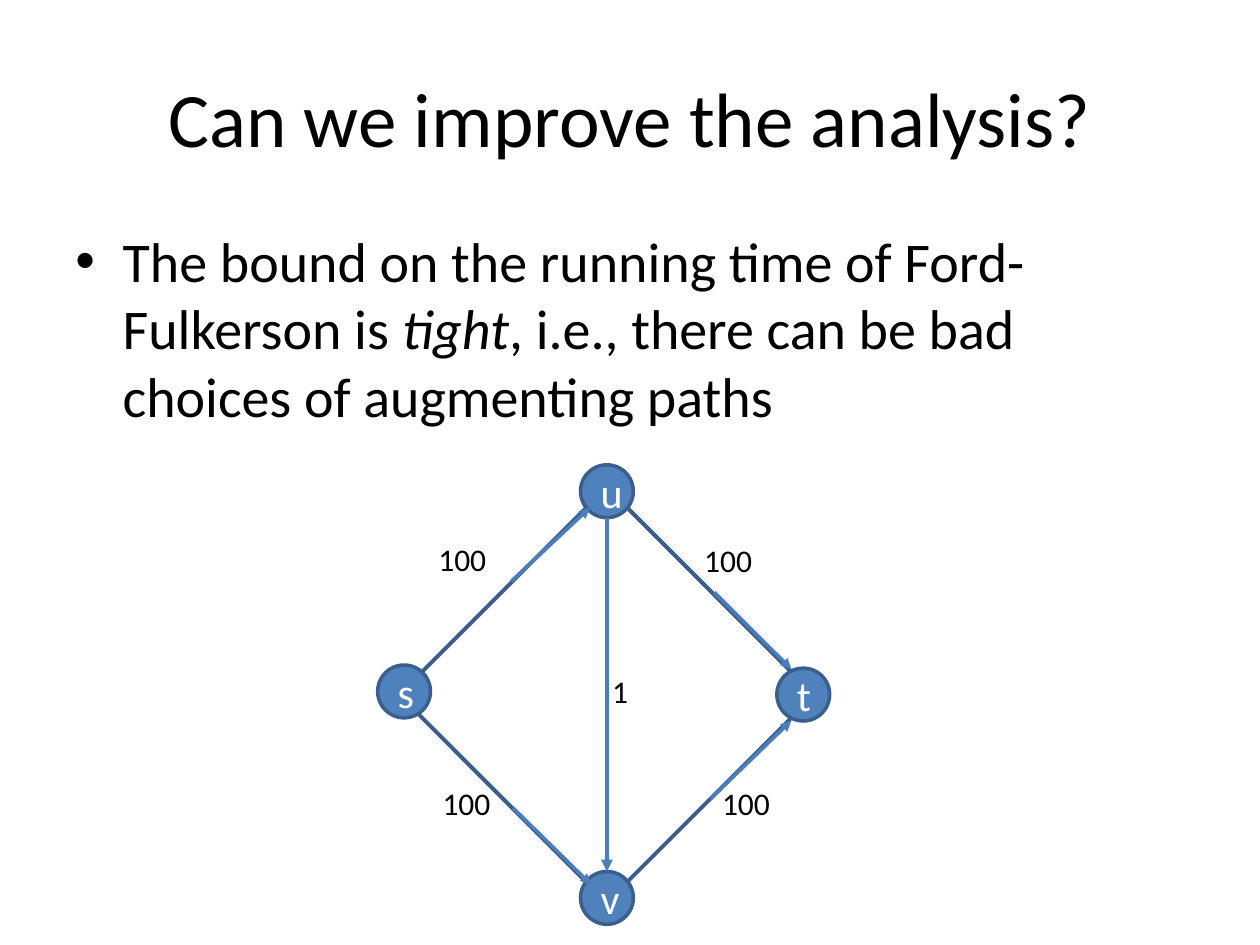
from lxml import etree
from pptx import Presentation, util as u
from pptx.dml.color import RGBColor
from pptx.enum import shapes, text
from pptx.oxml import ns

Pt = u.Pt


def color(value):
    return RGBColor.from_string(value)


def add_xml(parent, tag, **attributes):
    return etree.SubElement(parent, ns.qn(tag), attributes)


def write(paragraph, content, size, ink="000000", italic=False, align=None):
    """Add a formatted run; align applies to its whole paragraph."""
    if align is not None:
        paragraph.alignment = align
    run = paragraph.add_run()
    run.text = content
    run.font.name = "Calibri"
    run.font.size = Pt(size)
    run.font.italic = italic
    run.font.color.rgb = color(ink)


class Deck:
    node_fill, outline, arrow_color = "4F81BD", "3A5F8C", "4B7EBC"
    node_size = 30.2

    def __init__(self, slide):
        self.slide = slide

    def box(self, left, top, width, height, wrap=True, anchor=text.MSO_ANCHOR.TOP):
        frame = self.slide.shapes.add_textbox(
            Pt(left), Pt(top), Pt(width), Pt(height)).text_frame
        frame.word_wrap = wrap
        frame.vertical_anchor = anchor
        return frame

    def title(self, content):
        frame = self.box(36, 21.6, 648, 90, anchor=text.MSO_ANCHOR.MIDDLE)
        write(frame.paragraphs[0], content, 44, align=text.PP_ALIGN.CENTER)

    def bullet(self, runs):
        paragraph = self.box(36, 126, 648, 131.8).paragraphs[0]
        properties = paragraph._p.get_or_add_pPr()
        properties.set("marL", str(Pt(27)))
        properties.set("indent", str(Pt(-27)))
        add_xml(properties, "a:buFont", typeface="Arial")
        add_xml(properties, "a:buChar", char="•")
        for content, italic in runs:
            write(paragraph, content, 32, italic=italic)

    def outlined(self, preset, left, top, size, weight):
        shape = self.slide.shapes.add_shape(preset, Pt(left), Pt(top), Pt(size), Pt(size))
        shape.shadow.inherit = False
        shape.line.color.rgb = color(self.outline)
        shape.line.width = Pt(weight)
        return shape

    def diamond(self, left, top, size):
        """Draw the four edges of the network as a square on its corner."""
        square = self.outlined(shapes.MSO_SHAPE.RECTANGLE, left, top, size, 2.25)
        square.fill.background()
        square.rotation = 45

    def node(self, name, left, top):
        circle = self.outlined(shapes.MSO_SHAPE.OVAL, left, top, self.node_size, 2)
        circle.fill.solid()
        circle.fill.fore_color.rgb = color(self.node_fill)
        circle.text_frame.vertical_anchor = text.MSO_ANCHOR.MIDDLE
        write(circle.text_frame.paragraphs[0], name, 24, ink="FFFFFF",
              align=text.PP_ALIGN.CENTER)
        return circle

    def arrow(self, x1, y1, x2, y2, weight=2):
        line = self.slide.shapes.add_connector(
            shapes.MSO_CONNECTOR.STRAIGHT, Pt(x1), Pt(y1), Pt(x2), Pt(y2))
        line.line.color.rgb = color(self.arrow_color)
        line.line.width = Pt(weight)
        add_xml(line.line._get_or_add_ln(), "a:tailEnd", type="triangle")
        add_xml(line._element.spPr, "a:effectLst")
        return line

    def capacity(self, value, left, top, width=42.5):
        frame = self.box(left, top, width, 29, wrap=False)
        frame.auto_size = text.MSO_AUTO_SIZE.SHAPE_TO_FIT_TEXT
        write(frame.paragraphs[0], value, 18)


def main():
    presentation = Presentation()
    presentation.slide_width, presentation.slide_height = Pt(720), Pt(540)
    deck = Deck(presentation.slides.add_slide(presentation.slide_layouts[6]))

    deck.title("Can we improve the analysis?")
    deck.bullet([
        ("The bound on the running time of Ford-Fulkerson is ", False),
        ("tight", True),
        (", i.e., there can be bad choices of augmenting paths", False),
    ])

    deck.diamond(262.8, 313.2, 167.8)
    positions = {"s": (215.8, 380), "t": (443.9, 381.8),
                 "u": (331.7, 265.6), "v": (331.7, 498)}
    nodes = {name: deck.node(name, *place) for name, place in positions.items()}

    middle = positions["u"][0] + deck.node_size / 2
    u_bottom = positions["u"][1] + deck.node_size
    down = deck.arrow(middle, u_bottom, middle, positions["v"][1], weight=2.25)
    down.end_connect(nodes["v"], 0)
    for ends in [(292.3, 332, 337, 290.2), (408.2, 338.4, 452.2, 382.3),
                 (293, 461.5, 337.7, 505.4), (406, 456.5, 452.2, 411.8)]:
        deck.arrow(*ends)

    for left, top in [(243.4, 305.3), (395.3, 305.6), (245.8, 444.6), (405.5, 444.7)]:
        deck.capacity("100", left, top)
    deck.capacity("1", 342.7, 380.2, width=23.8)

    presentation.save("out.pptx")


if __name__ == "__main__":
    main()
